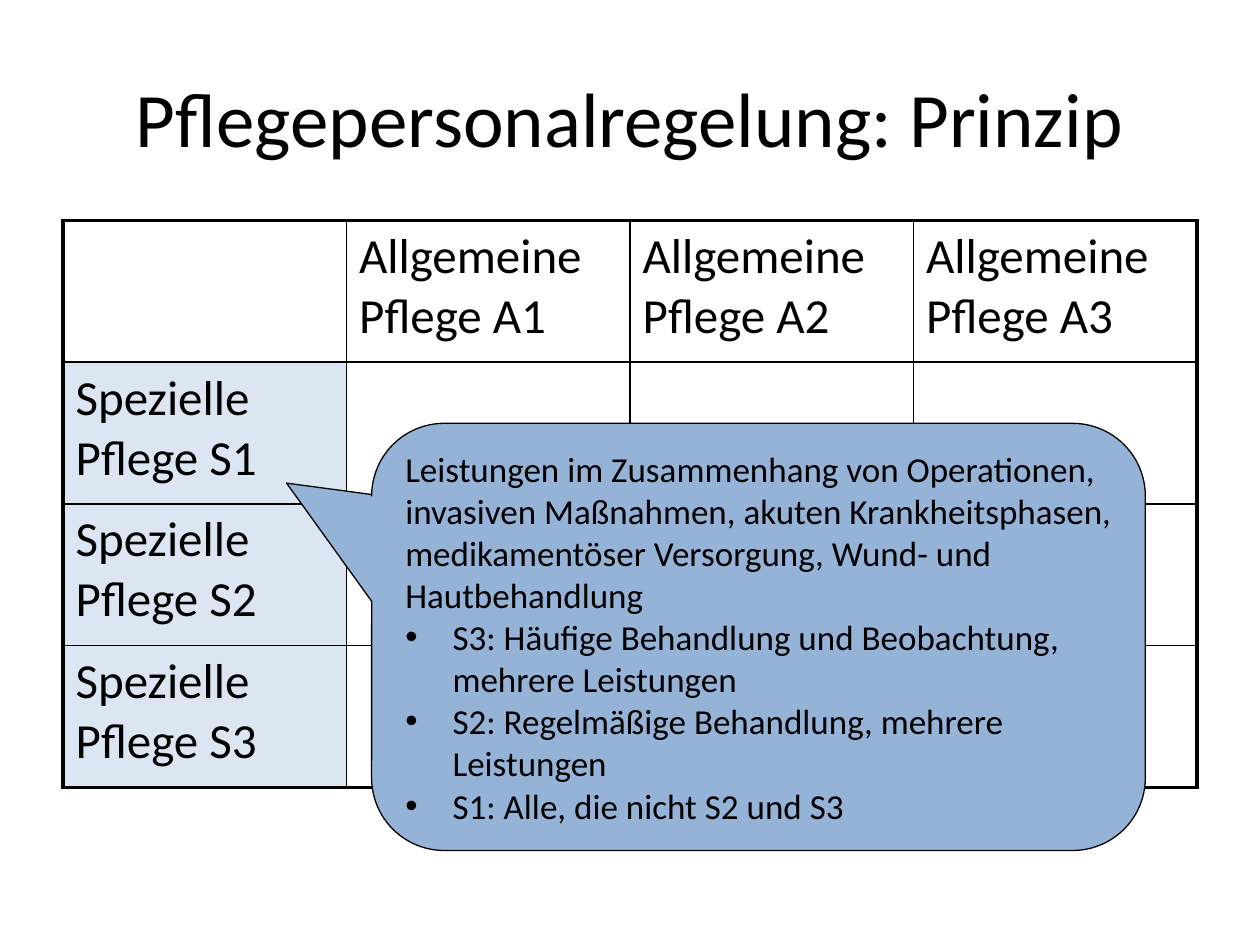
"""Build the slide on the principle of the Pflegepersonalregelung."""
from lxml import etree
from pptx import Presentation
from pptx.dml.color import RGBColor
from pptx.enum.shapes import MSO_SHAPE
from pptx.enum.text import MSO_ANCHOR, PP_ALIGN
from pptx.oxml.ns import qn
from pptx.util import Pt

CALLOUT = MSO_SHAPE.ROUNDED_RECTANGULAR_CALLOUT
MIDDLE = MSO_ANCHOR.MIDDLE
CENTER, LEFT = PP_ALIGN.CENTER, PP_ALIGN.LEFT
BLACK, PALE_BLUE, BLUE = "000000", "DCE6F2", "95B3D7"
SIZE = 4


def color(code):
    return RGBColor.from_string(code)


def add_span(para, text, size, align=LEFT):
    para.alignment = align
    span = para.add_run()
    span.text = text
    span.font.name = "Calibri"
    span.font.size = Pt(size)
    span.font.color.rgb = color(BLACK)


deck = Presentation()
deck.slide_width, deck.slide_height = Pt(720), Pt(540)
page = deck.slides.add_slide(deck.slide_layouts[5])

title = page.shapes.title
title.left, title.top, title.width, title.height = Pt(36), Pt(21.6), Pt(648), Pt(90)
title.text_frame.vertical_anchor = MIDDLE
add_span(title.text_frame.paragraphs[0], "Pflegepersonalregelung: Prinzip", 44, CENTER)

table = page.shapes.add_table(SIZE, SIZE, Pt(36), Pt(126), Pt(648), Pt(324)).table
table.first_row = table.horz_banding = False
for row in range(SIZE):
    table.rows[row].height = Pt(81)
    for column in range(SIZE):
        cell = table.cell(row, column)
        outer_edges = {
            "L": column == 0,
            "R": column == SIZE - 1,
            "T": row == 0,
            "B": row == SIZE - 1,
        }
        properties = cell._tc.get_or_add_tcPr()
        for side, is_outer in outer_edges.items():
            width = Pt(2.25 if is_outer else 1)
            border = etree.SubElement(properties, qn(f"a:ln{side}"), w=str(width))
            fill = etree.SubElement(border, qn("a:solidFill"))
            etree.SubElement(fill, qn("a:srgbClr"), val=BLACK)
        if column == 0 and row > 0:
            cell.fill.solid()
            cell.fill.fore_color.rgb = color(PALE_BLUE)
        else:
            cell.fill.background()
        label = ""
        if row == 0 and column > 0:
            label = f"Allgemeine Pflege A{column}"
        elif column == 0 and row > 0:
            label = f"Spezielle Pflege S{row}"
        if label:
            para = cell.text_frame.paragraphs[0]
            para.space_before = Pt(5.6)
            add_span(para, label, 28)

callout = page.shapes.add_shape(CALLOUT, Pt(212.4), Pt(241.9), Pt(442.1), Pt(244.1))
callout.shadow.inherit = False
for index, value in enumerate((-0.61, -0.36, 0.17)):
    callout.adjustments[index] = value
callout.fill.solid()
callout.fill.fore_color.rgb = color(BLUE)
callout.line.color.rgb = color(BLACK)
callout.line.width = Pt(0.75)
frame = callout.text_frame
frame.word_wrap = True
frame.vertical_anchor = MIDDLE
add_span(
    frame.paragraphs[0],
    "Leistungen im Zusammenhang von Operationen, invasiven Maßnahmen, akuten "
    "Krankheitsphasen, medikamentöser Versorgung, Wund- und Hautbehandlung",
    20,
)
levels = (
    "S3: Häufige Behandlung und Beobachtung, mehrere Leistungen",
    "S2: Regelmäßige Behandlung, mehrere Leistungen",
    "S1: Alle, die nicht S2 und S3",
)
for level in levels:
    para = frame.add_paragraph()
    add_span(para, level, 20)
    properties = para._p.get_or_add_pPr()
    properties.set("marL", str(Pt(27)))
    properties.set("indent", str(-Pt(27)))
    etree.SubElement(properties, qn("a:buFont"), typeface="Arial")
    etree.SubElement(properties, qn("a:buChar"), char="•")

deck.save("out.pptx")
